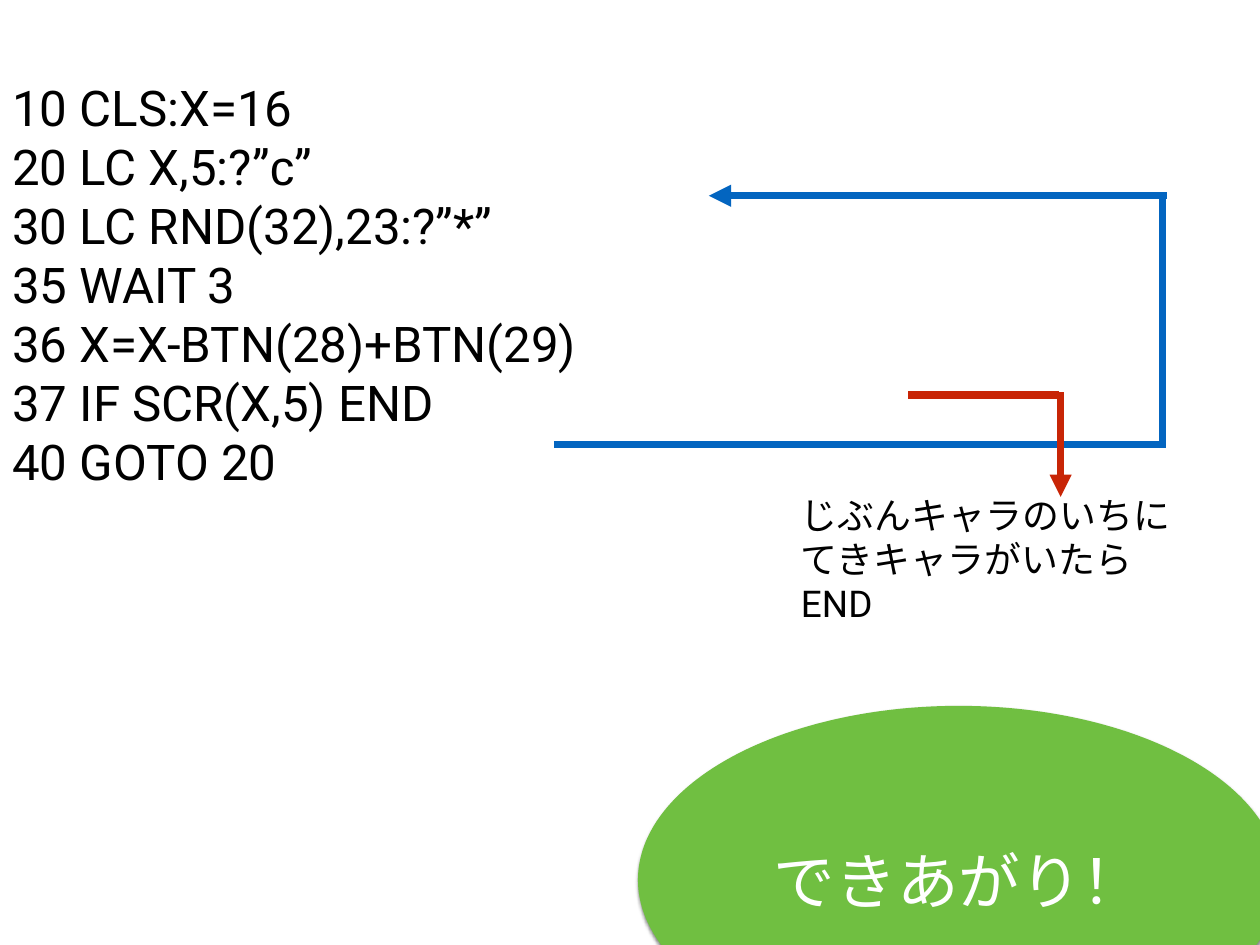
from lxml import etree
from pptx import Presentation, util as u
from pptx.dml.color import RGBColor
from pptx.enum import shapes, text
from pptx.oxml import ns

CODE = [
    [("10 CLS:X=16", "Roboto")],
    [("20 LC X,5:?”", "Roboto"), ("c", "Arial"), ("”", "Roboto")],
    [("30 LC RND(32),23:?”*”", "Roboto")],
    [("35 WAIT 3", "Roboto")],
    [("36 X=X-BTN(28)+BTN(29)", "Roboto")],
    [("37 IF SCR(X,5) END", "Roboto")],
    [("40 GOTO 20", "Roboto")],
]
NOTE = ["じぶんキャラのいちに", "てきキャラがいたら", "END"]


def color(value):
    return RGBColor.from_string(value)


def add_xml(parent, tag, **attributes):
    return etree.SubElement(parent, ns.qn(tag), attributes)


class SlideBuilder:
    """Draws text, arrows and callouts in the style of this slide."""

    black, white = "000000", "FFFFFF"
    blue, red, green = "0365C0", "C82506", "70BF41"
    japanese_font = "Noto Sans CJK JP"
    inset = u.Inches(0.06)
    line_width = u.Pt(6)

    def __init__(self, slide):
        self.slide = slide

    def fill_text(self, shape, lines, size, font_color, anchor, spacing=None, align=None):
        frame = shape.text_frame
        frame.word_wrap = True
        frame.vertical_anchor = anchor
        frame.margin_left = frame.margin_right = self.inset
        frame.margin_top = frame.margin_bottom = self.inset
        for index, pieces in enumerate(lines):
            paragraph = frame.add_paragraph() if index else frame.paragraphs[0]
            paragraph.alignment = align
            if spacing:
                paragraph.line_spacing = u.Pt(spacing)
            paragraph.font.size = u.Pt(size)
            paragraph.font.color.rgb = color(font_color)
            paragraph.font.name = pieces[0][1]
            for words, font_name in pieces:
                run = paragraph.add_run()
                run.text = words
                run.font.name = font_name
                add_xml(run.font._element, "a:ea", typeface=self.japanese_font)

    def text_box(self, left, top, width, height, lines, size, spacing):
        box = self.slide.shapes.add_textbox(*map(u.Inches, (left, top, width, height)))
        self.fill_text(box, lines, size, self.black, text.MSO_ANCHOR.TOP, spacing)

    def callout(self, left, top, width, height, tail, words, size):
        shape = self.slide.shapes.add_shape(
            shapes.MSO_SHAPE.OVAL_CALLOUT, *map(u.Inches, (left, top, width, height)))
        shape.adjustments[0], shape.adjustments[1] = tail
        shape.fill.solid()
        shape.fill.fore_color.rgb = color(self.green)
        shape.line.fill.background()
        shape.shadow.inherit = False
        effects = shape._element.spPr.find(ns.qn("a:effectLst"))
        shadow = add_xml(effects, "a:outerShdw", blurRad=str(u.Pt(3)),
                         dist=str(u.Pt(2)), dir="5400000", rotWithShape="0")
        shade = add_xml(shadow, "a:srgbClr", val=self.black)
        add_xml(shade, "a:alpha", val="50000")
        self.fill_text(shape, [[(words, self.japanese_font)]], size, self.white,
                       text.MSO_ANCHOR.MIDDLE, align=text.PP_ALIGN.CENTER)

    def line(self, start, end, line_color, arrow=False):
        connector = self.slide.shapes.add_connector(
            shapes.MSO_CONNECTOR.STRAIGHT, *map(u.Inches, (*start, *end)))
        connector.line.color.rgb = color(line_color)
        connector.line.width = self.line_width
        if arrow:
            add_xml(connector.line._get_or_add_ln(), "a:tailEnd", type="triangle")
        add_xml(connector._element.spPr, "a:effectLst")


def main():
    presentation = Presentation()
    presentation.slide_width = u.Inches(14.22)
    presentation.slide_height = u.Inches(10.67)
    builder = SlideBuilder(presentation.slides.add_slide(presentation.slide_layouts[6]))

    builder.text_box(0.08, 0.81, 13.91, 4.8, CODE, size=40, spacing=48)
    builder.callout(7.2, 7.97, 7.24, 3.93, (0.316, 0.643), "できあがり！", size=50)

    builder.line((6.25, 5.02), (13.13, 5.02), builder.blue)
    builder.line((13.12, 5.06), (13.12, 2.25), builder.blue)
    builder.line((13.17, 2.21), (8, 2.21), builder.blue, arrow=True)
    builder.line((10.25, 4.46), (11.95, 4.46), builder.red)
    builder.line((11.97, 4.43), (11.97, 5.61), builder.red, arrow=True)

    note_lines = [[(words, "Roboto")] for words in NOTE]
    builder.text_box(8.98, 5.5, 4.75, 1.62, note_lines, size=30, spacing=36)
    presentation.save("out.pptx")


if __name__ == "__main__":
    main()
